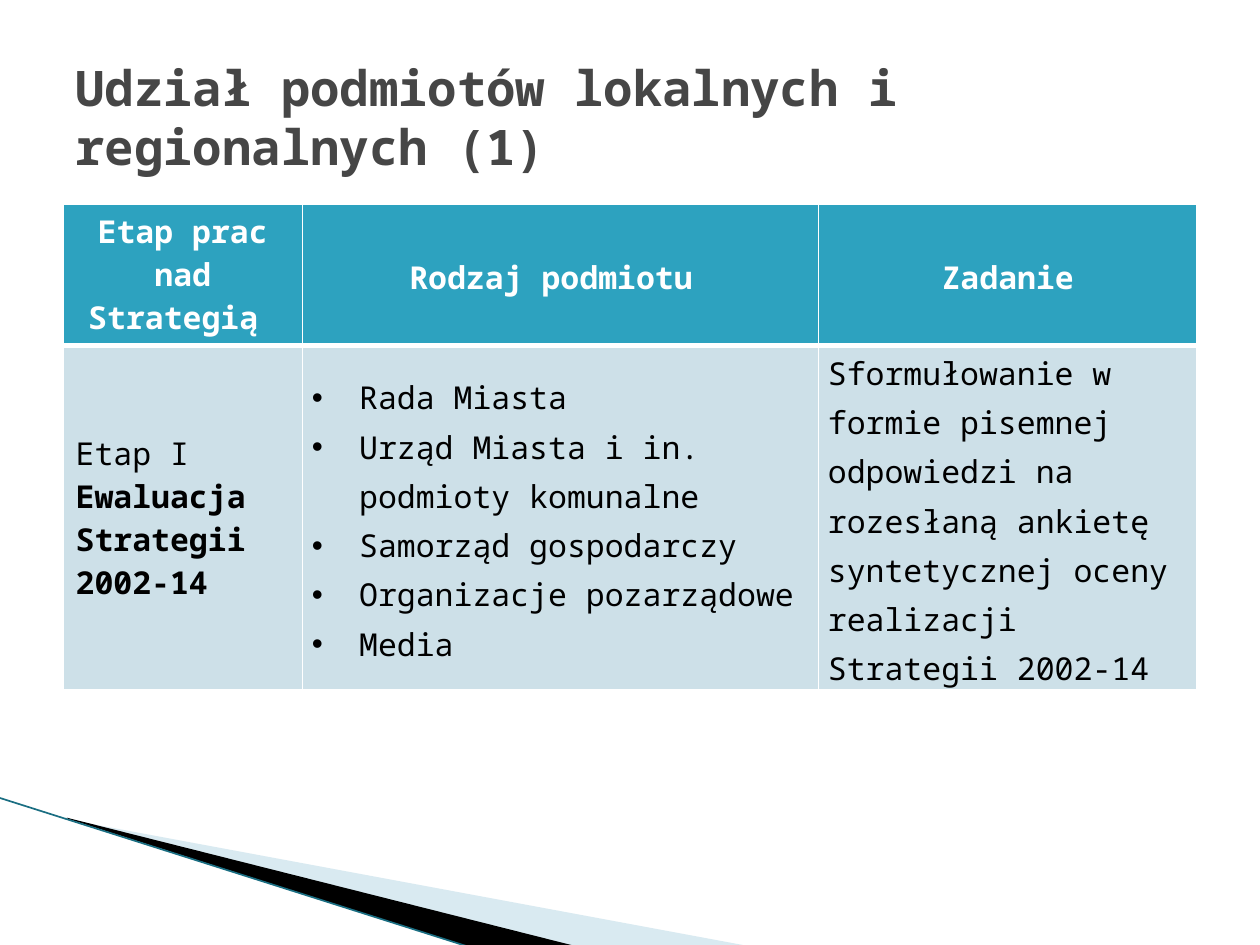
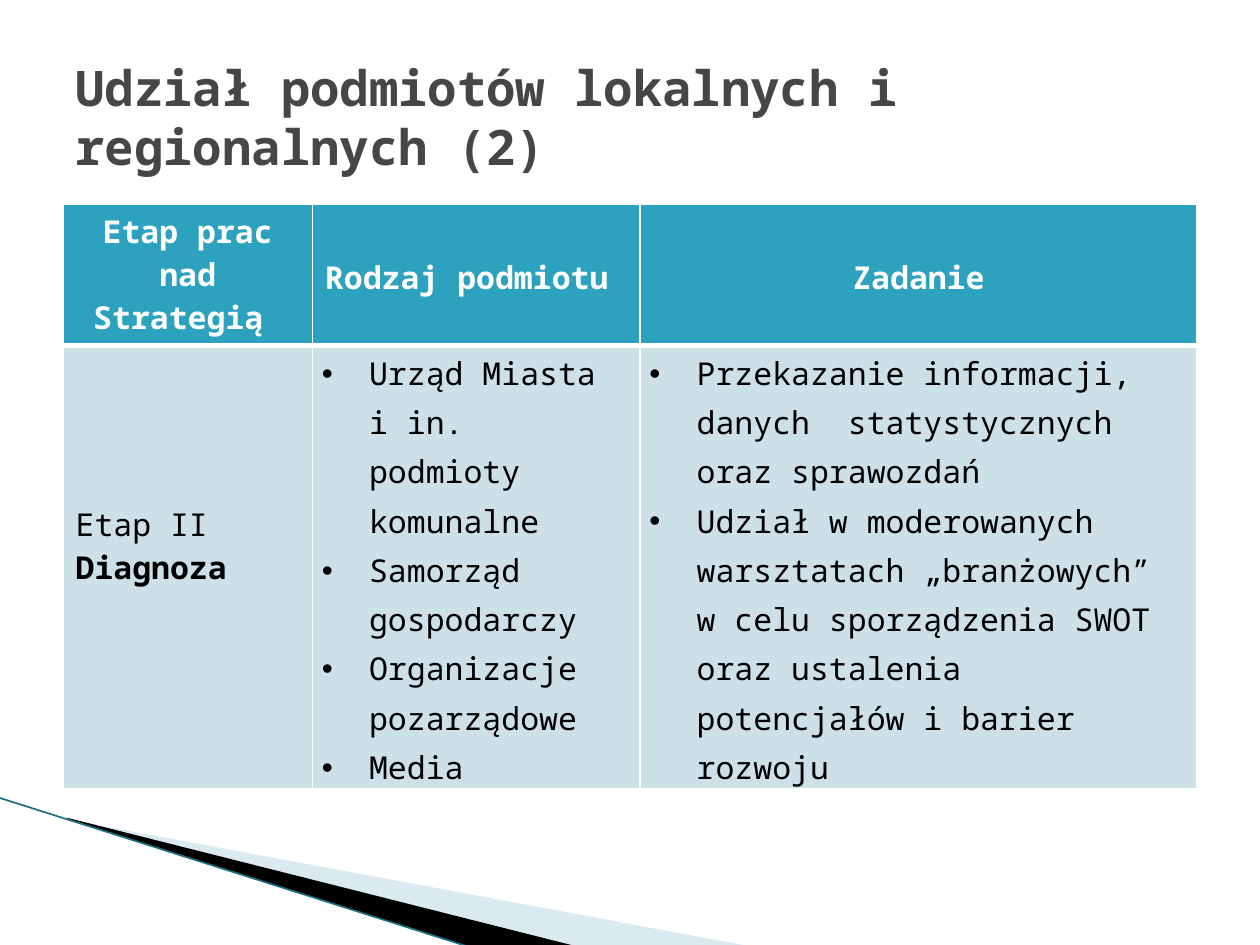
from lxml.etree import SubElement
from pptx import Presentation
from pptx.dml.color import RGBColor
from pptx.enum.shapes import MSO_CONNECTOR
from pptx.enum.text import MSO_ANCHOR, MSO_AUTO_SIZE, PP_ALIGN
from pptx.oxml import parse_xml
from pptx.oxml.ns import nsdecls, qn
from pptx.util import Pt

COLORS = {
    "title": "464646", "header": "2DA2BF", "body": "CDE0E8", "text": "000000",
    "white": "FFFFFF", "light_wedge": "A0CBDC", "dark_wedge": "000000", "edge": "1A6E82",
}
FONT = "Noto Sans Mono"
HEADINGS = ["Etap prac nad Strategią ", "Rodzaj podmiotu ", "Zadanie"]
BULLET_INDENT = Pt(27)
WEDGES = [
    ("light_wedge", 40, [(39.6, 468.5), (428.4, 540.7), (328.3, 540.7), (39.6, 468)]),
    ("dark_wedge", 100, [(38.2, 467.3), (329, 540.7), (269, 541.4), (38.9, 468)]),
]
STAGES = [
    {
        "title": "Udział podmiotów lokalnych i regionalnych (1)",
        "widths": [136.8, 294.9, 216.3],
        "body_height": 195.5,
        "stage": [("Etap I ", False), ("Ewaluacja Strategii 2002-14", True)],
        "stage_bottom": 3.6,
        "entities": ["Rada Miasta", "Urząd Miasta i in. podmioty komunalne",
                     "Samorząd gospodarczy", "Organizacje pozarządowe", "Media"],
        "tasks": ["Sformułowanie w formie pisemnej odpowiedzi na rozesłaną ankietę "
                  "syntetycznej oceny realizacji Strategii 2002-14"],
    },
    {
        "title": "Udział podmiotów lokalnych i regionalnych (2)",
        "widths": [142.5, 187.2, 318.3],
        "body_height": 252,
        "stage": [("Etap II ", False), ("Diagnoza", True)],
        "stage_bottom": 28.2,
        "entities": ["Urząd Miasta i in. podmioty komunalne", "Samorząd gospodarczy",
                     "Organizacje pozarządowe", "Media"],
        "tasks": ["Przekazanie informacji, danych  statystycznych oraz sprawozdań",
                  "Udział w moderowanych warsztatach „branżowych” w celu sporządzenia "
                  "SWOT oraz ustalenia potencjałów i barier rozwoju"],
    },
]


def write(frame, paragraphs, size=18, color="text", bold=False,
          align=PP_ALIGN.LEFT, spacing=None, bullets=False):
    """Fill a text frame; a paragraph is a string or a list of (text, bold) runs."""
    for index, content in enumerate(paragraphs):
        paragraph = frame.paragraphs[0] if index == 0 else frame.add_paragraph()
        paragraph.alignment = align
        if spacing:
            paragraph.line_spacing = spacing
        if bullets:
            properties = paragraph._p.get_or_add_pPr()
            properties.set("marL", str(BULLET_INDENT))
            properties.set("indent", str(-BULLET_INDENT))
            SubElement(properties, qn("a:buFont"), typeface="Arial")
            SubElement(properties, qn("a:buChar"), char="•")
        runs = [(content, bold)] if isinstance(content, str) else content
        for text, run_bold in runs:
            run = paragraph.add_run()
            run.text = text
            run.font.name = FONT
            run.font.size = Pt(size)
            run.font.bold = run_bold
            run.font.color.rgb = RGBColor.from_string(COLORS[color])


def style_cell(cell, fill, top, bottom):
    """Set the fill and white borders; top and bottom are border widths in points."""
    cell.fill.solid()
    cell.fill.fore_color.rgb = RGBColor.from_string(COLORS[fill])
    borders = [("lnL", 1), ("lnR", 1), ("lnT", top), ("lnB", bottom)]
    for position, (side, width) in enumerate(borders):
        border = parse_xml(
            f'<a:{side} {nsdecls("a")} w="{Pt(width)}"><a:solidFill>'
            f'<a:srgbClr val="{COLORS["white"]}"/></a:solidFill></a:{side}>')
        cell._tc.get_or_add_tcPr().insert(position, border)


deck = Presentation()
deck.slide_width, deck.slide_height = Pt(720), Pt(540)

for stage in STAGES:
    slide = deck.slides.add_slide(deck.slide_layouts[5])

    # Corner decoration
    for color, opacity, points in WEDGES:
        corners = [(Pt(x), Pt(y)) for x, y in points]
        builder = slide.shapes.build_freeform(*corners[0])
        builder.add_line_segments(corners[1:], close=True)
        wedge = builder.convert_to_shape()
        wedge.shadow.inherit = False
        wedge.line.fill.background()
        wedge.fill.solid()
        wedge.fill.fore_color.rgb = RGBColor.from_string(COLORS[color])
        if opacity < 100:
            tint = wedge._element.spPr.find(".//" + qn("a:srgbClr"))
            SubElement(tint, qn("a:alpha"), val=str(opacity * 1000))
    edge = slide.shapes.add_connector(
        MSO_CONNECTOR.STRAIGHT, Pt(-0.7), Pt(455.8), Pt(269), Pt(541.4))
    edge.line.color.rgb = RGBColor.from_string(COLORS["edge"])
    edge.line.width = Pt(0.95)
    SubElement(edge._element.spPr, qn("a:effectLst"))

    # Title
    title = slide.shapes.title
    title.left, title.top, title.width, title.height = Pt(36), Pt(21.6), Pt(648), Pt(90)
    title.text_frame.auto_size = MSO_AUTO_SIZE.NONE
    title.text_frame.vertical_anchor = MSO_ANCHOR.MIDDLE
    write(title.text_frame, [stage["title"]], size=28, color="title", bold=True)

    # Table of entities and their tasks
    table = slide.shapes.add_table(
        2, 3, Pt(36), Pt(116.6), Pt(648), Pt(80 + stage["body_height"])).table
    table.rows[0].height, table.rows[1].height = Pt(80), Pt(stage["body_height"])
    contents = [[stage["stage"]], stage["entities"], stage["tasks"]]
    for column, (width, heading, content) in enumerate(zip(stage["widths"], HEADINGS, contents)):
        table.columns[column].width = Pt(width)
        header, body = table.cell(0, column), table.cell(1, column)
        style_cell(header, "header", top=1, bottom=3)
        style_cell(body, "body", top=3, bottom=1)
        body.vertical_anchor = MSO_ANCHOR.MIDDLE
        spacing = None
        if column == 0:
            body.margin_bottom = Pt(stage["stage_bottom"])
        else:
            spacing = 1.15
            header.vertical_anchor = MSO_ANCHOR.MIDDLE
            for cell in (header, body):
                cell.margin_left = cell.margin_right = Pt(5.4)
                cell.margin_top = cell.margin_bottom = Pt(0)
        write(header.text_frame, [heading], color="white", bold=True,
              align=PP_ALIGN.CENTER, spacing=spacing)
        write(body.text_frame, content, spacing=spacing, bullets=len(content) > 1)

deck.save("out.pptx")
